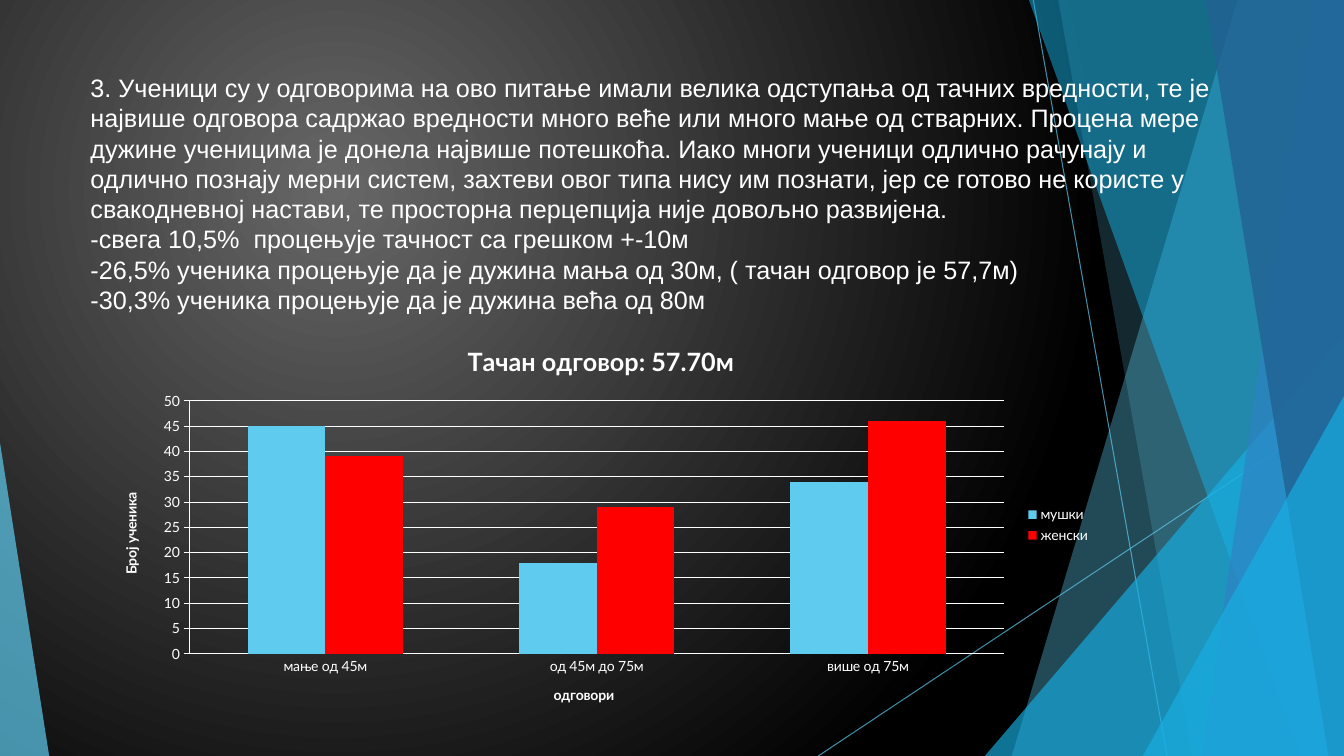
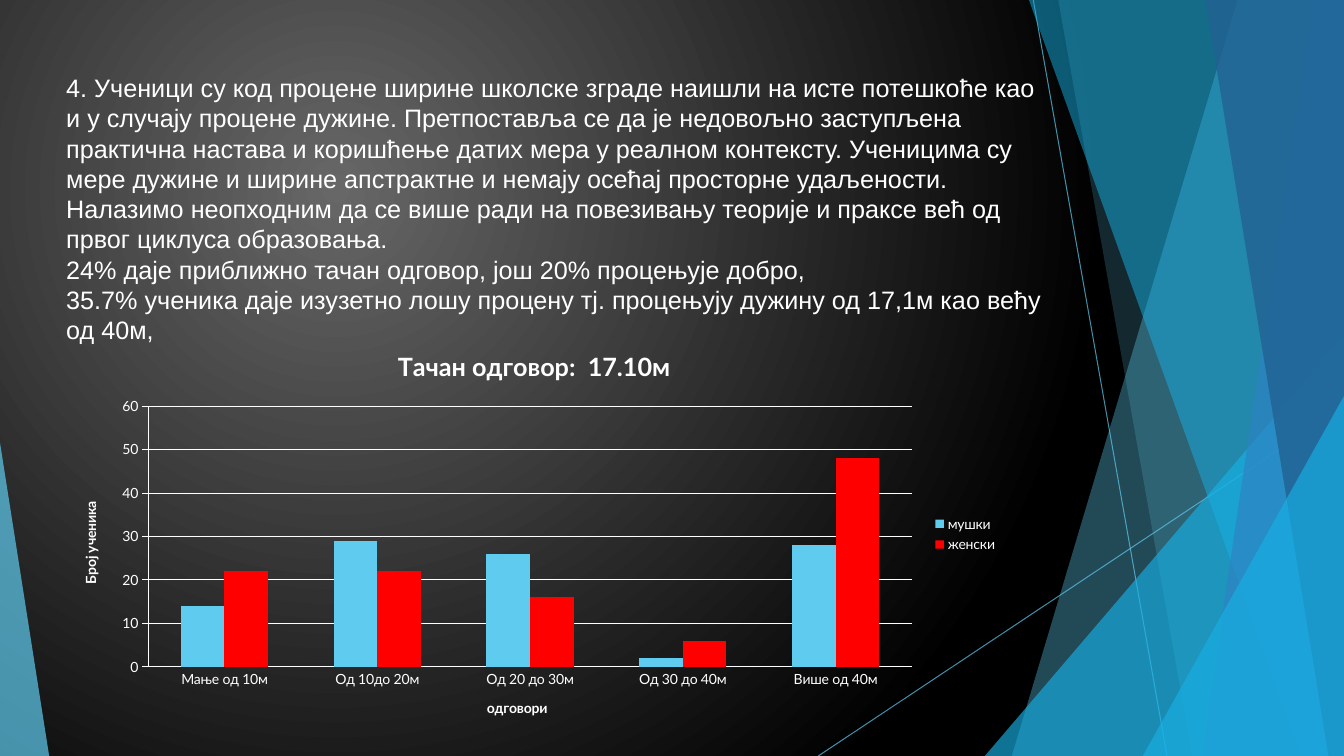
from lxml.etree import SubElement
from pptx import Presentation
from pptx.chart.data import CategoryChartData
from pptx.dml.color import RGBColor
from pptx.enum.chart import XL_CHART_TYPE, XL_LEGEND_POSITION, XL_TICK_MARK
from pptx.enum.shapes import MSO_CONNECTOR, MSO_SHAPE
from pptx.enum.text import MSO_ANCHOR
from pptx.oxml.ns import qn
from pptx.util import Cm, Pt

SLIDE_WIDTH, SLIDE_HEIGHT = 33.87, 19.05
WHITE, SKY, CYAN, BLUE, NAVY, RED = "FFFFFF", "5FCBEF", "17B0E4", "2E83C3", "226292", "FF0000"
BACKGROUND_INNER, BACKGROUND_OUTER = "676767", "000000"
TEXT_FONT, CHART_FONT = "Arial", "Lato"

QUESTIONS = [
    {
        "text": [
            "3. Ученици су у одговорима на ово питање имали велика одступања од тачних вредности, "
            "те је највише одговора садржао вредности много веће или много мање од стварних. "
            "Процена мере дужине ученицима је донела највише потешкоћа. Иако многи ученици одлично "
            "рачунају и одлично познају мерни систем, захтеви овог типа нису им познати, јер се "
            "готово не користе у свакодневној настави, те просторна перцепција није довољно развијена.",
            "-свега 10,5%  процењује тачност са грешком +-10м",
            "-26,5% ученика процењује да је дужина мања од 30м, ( тачан одговор је 57,7м)",
            "-30,3% ученика процењује да је дужина већа од 80м",
        ],
        "text_box": (2.03, 1.7, 29.31, 6.58),
        "chart_title": "Тачан одговор: 57.70м",
        "chart_box": (2.54, 8.2, 25.2, 10.06),
        "categories": ["мање од 45м", "од 45м до 75м", "више од 75м"],
        "male": [45, 18, 34],
        "female": [39, 29, 46],
    },
    {
        "text": [
            "4. Ученици су код процене ширине школске зграде наишли на исте потешкоће као и у "
            "случају процене дужине. Претпоставља се да је недовољно заступљена практична настава "
            "и коришћење датих мера у реалном контексту. Ученицима су мере дужине и ширине "
            "апстрактне и немају осећај просторне удаљености. Налазимо неопходним да се више ради "
            "на повезивању теорије и праксе већ од првог циклуса образовања.",
            "24% даје приближно тачан одговор, још 20% процењује добро,",
            "35.7% ученика даје изузетно лошу процену тј. процењују дужину од 17,1м као већу од 40м,",
        ],
        "text_box": (1.42, 1.7, 25.35, 3.66),
        "chart_title": "Тачан одговор:  17.10м",
        "chart_box": (1.52, 8.33, 23.88, 10.26),
        "categories": ["Мање од 10м", "Од 10до 20м", "Од 20 до 30м", "Од 30 до 40м", "Више од 40м"],
        "male": [14, 29, 26, 2, 28],
        "female": [22, 22, 16, 6, 48],
    },
]


def rgb(value):
    return RGBColor.from_string(value)


def set_opacity(shape, percent):
    for color in shape.element.spPr.iter(qn("a:srgbClr")):
        SubElement(color, qn("a:alpha")).set("val", str(percent * 1000))


def style_facet(shape, color, opacity):
    shape.shadow.inherit = False
    shape.fill.solid()
    shape.fill.fore_color.rgb = rgb(color)
    shape.line.fill.background()
    set_opacity(shape, opacity)


def style_font(font, size, name, bold=False):
    font.size = Pt(size)
    font.name = name
    font.bold = bold
    font.color.rgb = rgb(WHITE)


def set_background(master):
    fill = master.background.fill
    fill.gradient()
    for stop, color in zip(fill.gradient_stops, (BACKGROUND_INNER, BACKGROUND_OUTER)):
        stop.color.rgb = rgb(color)
    gradient = master.element.find(".//" + qn("a:gradFill"))
    gradient.remove(gradient.find(qn("a:lin")))
    focus = SubElement(gradient, qn("a:path"))
    focus.set("path", "circle")
    rectangle = SubElement(focus, qn("a:fillToRect"))
    for side, percent in (("l", 50), ("t", 50), ("r", 100), ("b", 100)):
        rectangle.set(side, str(percent * 1000))


def add_ray(slide, begin_x, begin_y, end_x, end_y):
    connector = slide.shapes.add_connector(
        MSO_CONNECTOR.STRAIGHT, Cm(begin_x), Cm(begin_y), Cm(end_x), Cm(end_y)
    )
    connector.line.width = Pt(0.75)
    connector.line.color.rgb = rgb(SKY)
    set_opacity(connector, 70)
    SubElement(connector.element.spPr, qn("a:effectLst"))


def add_band(slide, box, top_x, bottom_x, color, opacity):
    left, top, width, height = box
    right, bottom = Cm(left + width), Cm(top + height)
    builder = slide.shapes.build_freeform(Cm(left + top_x), Cm(top))
    builder.add_line_segments([(right, Cm(top)), (right, bottom), (Cm(left + bottom_x), bottom)])
    style_facet(builder.convert_to_shape(), color, opacity)


def add_wedge(slide, box, wedge_left, wedge_right, wedge_top, apex, color, opacity):
    left, top, _, height = box
    shape = slide.shapes.add_shape(
        MSO_SHAPE.ISOSCELES_TRIANGLE,
        Cm(left + wedge_left),
        Cm(top + wedge_top),
        Cm(wedge_right - wedge_left),
        Cm(height - wedge_top),
    )
    shape.adjustments[0] = apex
    style_facet(shape, color, opacity)


def add_facets(slide, box):
    left, top, width, height = box
    add_ray(slide, left + 26.04, top, left + 29.41, top + height)
    add_ray(slide, left + width, top + 10.24, left + 20.62, top + height)
    add_band(slide, box, 31.19, 25.5, SKY, 36)
    add_band(slide, box, 26.67, 30.05, SKY, 20)
    add_wedge(slide, box, 24.82, width, 8.46, 1, CYAN, 66)
    add_band(slide, box, 25.93, 32.79, CYAN, 50)
    add_band(slide, box, 33.1, 30.28, BLUE, 70)
    add_band(slide, box, 30.38, 33.48, NAVY, 80)
    add_wedge(slide, box, 28.8, width, 9.98, 1, CYAN, 66)
    add_wedge(slide, box, 0, 1.24, 11.15, 0, SKY, 70)


def add_findings(slide, box, lines):
    text_frame = slide.shapes.add_textbox(*map(Cm, box)).text_frame
    text_frame.word_wrap = True
    text_frame.vertical_anchor = MSO_ANCHOR.TOP
    text_frame.text = "\n".join(lines)
    for paragraph in text_frame.paragraphs:
        paragraph.line_spacing = Pt(21.6)
        style_font(paragraph.font, 18, TEXT_FONT)


def set_title(title, text, size):
    title.text_frame.text = text
    style_font(title.text_frame.paragraphs[0].font, size, CHART_FONT, bold=True)


def style_axis(axis, title, tick_mark):
    set_title(axis.axis_title, title, 10)
    axis.major_tick_mark = tick_mark
    axis.minor_tick_mark = XL_TICK_MARK.NONE
    axis.format.line.color.rgb = rgb(WHITE)
    style_font(axis.tick_labels.font, 10, CHART_FONT)


def add_answer_chart(slide, box, question):
    data = CategoryChartData()
    data.categories = question["categories"]
    data.add_series("мушки", question["male"])
    data.add_series("женски", question["female"])
    chart = slide.shapes.add_chart(XL_CHART_TYPE.COLUMN_CLUSTERED, *map(Cm, box), data).chart
    style_font(chart.font, 10, CHART_FONT)
    set_title(chart.chart_title, question["chart_title"], 18)
    chart.chart_title.include_text_in_layout = False

    chart.has_legend = True
    chart.legend.position = XL_LEGEND_POSITION.RIGHT
    chart.legend.include_in_layout = False
    style_font(chart.legend.font, 10, CHART_FONT)

    style_axis(chart.category_axis, "одговори", XL_TICK_MARK.NONE)
    value_axis = chart.value_axis
    style_axis(value_axis, "Број ученика", XL_TICK_MARK.OUTSIDE)
    body = value_axis.axis_title.element.find(".//" + qn("a:bodyPr"))
    body.set("rot", "-5400000")
    body.set("vert", "horz")
    value_axis.has_major_gridlines = True
    value_axis.major_gridlines.format.line.color.rgb = rgb(WHITE)

    plot = chart.plots[0]
    plot.gap_width = 150
    plot.overlap = 0
    plot.vary_by_categories = False
    for series, color in zip(plot.series, (SKY, RED)):
        series.format.fill.solid()
        series.format.fill.fore_color.rgb = rgb(color)


def add_question_slide(presentation, question):
    slide = presentation.slides.add_slide(presentation.slide_layouts[6])
    add_facets(slide, (0, 0, SLIDE_WIDTH, SLIDE_HEIGHT))
    add_findings(slide, question["text_box"], question["text"])
    add_answer_chart(slide, question["chart_box"], question)


def main():
    presentation = Presentation()
    presentation.slide_width = Cm(SLIDE_WIDTH)
    presentation.slide_height = Cm(SLIDE_HEIGHT)
    set_background(presentation.slide_master)
    for question in QUESTIONS:
        add_question_slide(presentation, question)
    presentation.save("out.pptx")


if __name__ == "__main__":
    main()
